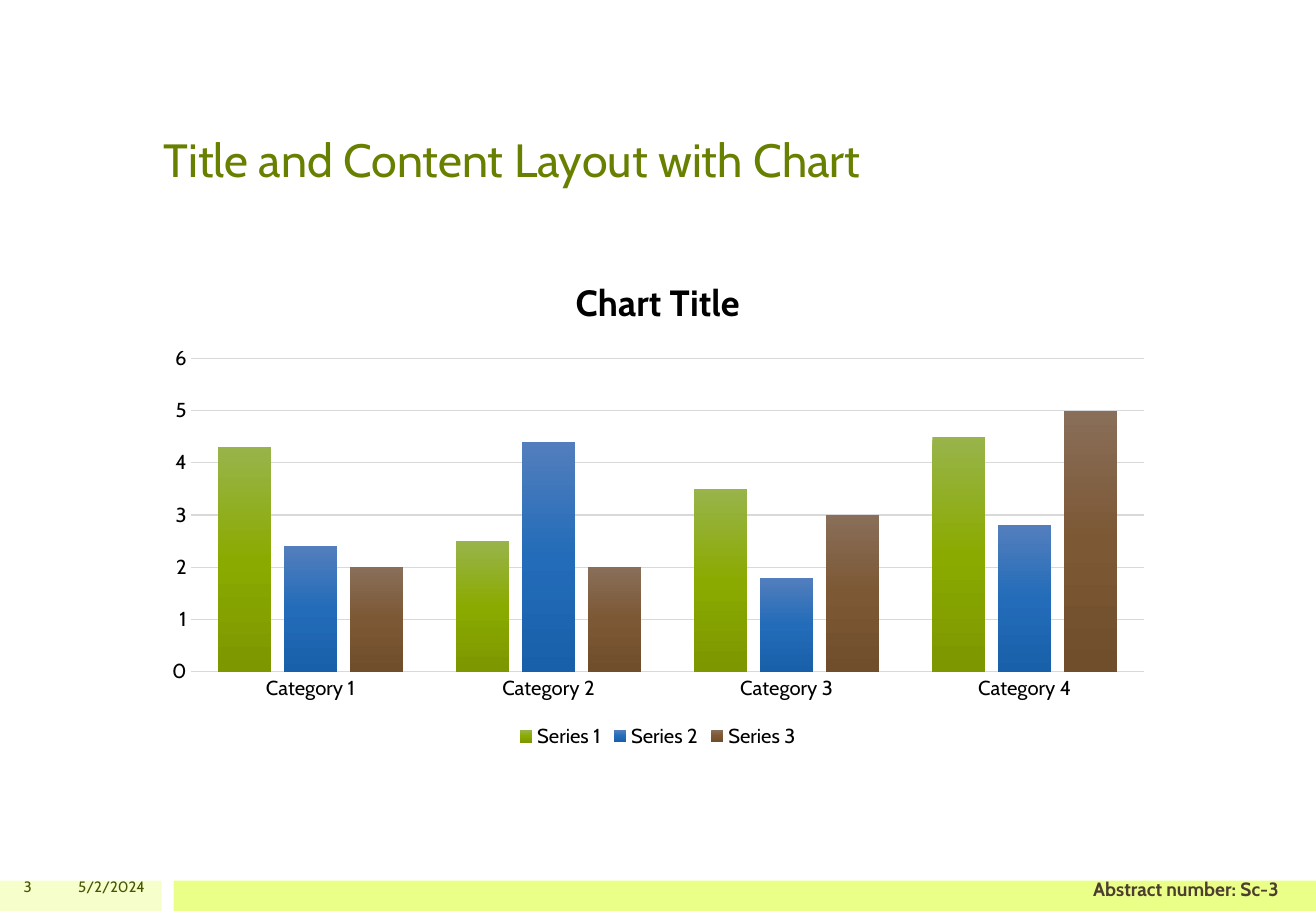
from copy import deepcopy
from dataclasses import dataclass

from pptx import Presentation
from pptx.chart.data import CategoryChartData
from pptx.dml.color import RGBColor as RGB
from pptx.enum.chart import XL_CHART_TYPE as CHART, XL_LEGEND_POSITION as LEGEND, XL_TICK_MARK as TICK
from pptx.enum.shapes import MSO_SHAPE as SHAPE
from pptx.enum.text import MSO_ANCHOR as ANCHOR, PP_ALIGN as ALIGN
from pptx.util import Inches, Pt


@dataclass(frozen=True)
class Theme:
    font: str = "Cabin"
    title: str = "688000"
    small: str = "455500"
    footer: str = "4D3E2F"
    ink: str = "000000"
    grid: str = "D9D9D9"
    pale_band: str = "F6FFCC"
    band: str = "E9FF88"
    gradients: tuple = (
        ("98B44B", "8BAA00", "7C9700"),
        ("527EBD", "236CB9", "1960AA"),
        ("896E59", "7C5834", "714E2B"),
    )
    title_size: float = 27.6
    chart_title_size: float = 21.6
    axis_size: float = 12
    footer_size: float = 11.4
    small_size: float = 8.9


def set_font(font, theme, size, color, bold=False):
    font.name = theme.font
    font.size = Pt(size)
    font.bold = bold
    font.color.rgb = RGB.from_string(color)


def write_text(tf, text, theme, size, color, bold=False, align=ALIGN.LEFT, after=0):
    p = tf.paragraphs[0]
    p.alignment = align
    p.space_after = Pt(after)
    r = p.add_run()
    r.text = text
    set_font(r.font, theme, size, color, bold)


class SlideBuilder:
    def __init__(self, slide, theme):
        self.slide = slide
        self.theme = theme

    def band(self, x, y, w, h, color):
        sp = self.slide.shapes.add_shape(SHAPE.RECTANGLE, Inches(x), Inches(y), Inches(w), Inches(h))
        sp.shadow.inherit = False
        sp.fill.solid()
        sp.fill.fore_color.rgb = RGB.from_string(color)
        sp.line.fill.background()

    def text(self, text, x, y, w, h, anchor=ANCHOR.MIDDLE, inset=(0.1, 0.05), **style):
        sp = self.slide.shapes.add_textbox(Inches(x), Inches(y), Inches(w), Inches(h))
        tf = sp.text_frame
        tf.word_wrap = True
        tf.vertical_anchor = anchor
        tf.margin_left = tf.margin_right = Inches(inset[0])
        tf.margin_top = tf.margin_bottom = Inches(inset[1])
        write_text(tf, text, self.theme, **style)

    def grid_line(self, line):
        line.color.rgb = RGB.from_string(self.theme.grid)
        line.width = Pt(0.75)

    def gradient(self, series, colors):
        fill = series.format.fill
        fill.gradient()
        fill.gradient_angle = 270
        stops = series._element.xpath(".//a:gsLst")[0]
        stops.append(deepcopy(stops[0]))
        for i, (stop, color) in enumerate(zip(fill.gradient_stops, colors)):
            stop.position = i / 2
            stop.color.rgb = RGB.from_string(color)

    def column_chart(self, title, categories, series, x, y, w, h):
        t = self.theme
        data = CategoryChartData()
        data.categories = categories
        for name, values in series.items():
            data.add_series(name, values)
        chart = self.slide.shapes.add_chart(
            CHART.COLUMN_CLUSTERED, Inches(x), Inches(y), Inches(w), Inches(h), data).chart
        set_font(chart.font, t, t.axis_size, t.ink)

        chart.has_title = True
        write_text(chart.chart_title.text_frame, title, t, t.chart_title_size, t.ink,
                   bold=True, align=ALIGN.CENTER)
        chart.chart_title.include_in_layout = False
        chart.has_legend = True
        chart.legend.position = LEGEND.BOTTOM
        chart.legend.include_in_layout = False

        for axis in (chart.category_axis, chart.value_axis):
            axis.major_tick_mark = axis.minor_tick_mark = TICK.NONE
        self.grid_line(chart.category_axis.format.line)
        self.grid_line(chart.value_axis.major_gridlines.format.line)
        chart.value_axis.format.line.fill.background()
        chart.value_axis.minimum_scale = 0
        chart.value_axis.maximum_scale = 6
        chart.value_axis.major_unit = 1

        plot = chart.plots[0]
        plot.vary_by_categories = False
        plot.gap_width = 100
        plot.overlap = -24
        for s, colors in zip(plot.series, t.gradients):
            s.invert_if_negative = False
            self.gradient(s, colors)


def main():
    prs = Presentation()
    prs.slide_width = Inches(10.83)
    prs.slide_height = Inches(7.5)
    t = Theme()
    page = SlideBuilder(prs.slides.add_slide(prs.slide_layouts[6]), t)

    page.band(0, 7.25, 1.33, 0.25, t.pale_band)
    page.band(1.43, 7.25, 9.4, 0.25, t.band)
    page.text("Title and Content Layout with Chart", 1.25, 0.3, 8.33, 1.29,
              anchor=ANCHOR.BOTTOM, size=t.title_size, color=t.title)
    page.column_chart(
        "Chart Title",
        [f"Category {i}" for i in range(1, 5)],
        {
            "Series 1": (4.3, 2.5, 3.5, 4.5),
            "Series 2": (2.4, 4.4, 1.8, 2.8),
            "Series 3": (2, 2, 3, 5),
        },
        1.25, 2.09, 8.33, 4.11)
    for text, x, w in (("3", 0, 0.36), ("5/2/2024", 0.4, 0.89)):
        page.text(text, x, 7.2, w, 0.2, size=t.small_size, color=t.small,
                  align=ALIGN.RIGHT, after=4.9)
    page.text("Abstract number: Sc-3", 8.64, 7.22, 2.24, 0.19, anchor=ANCHOR.TOP,
              inset=(0, 0), size=t.footer_size, color=t.footer, bold=True, align=ALIGN.CENTER)
    prs.save("out.pptx")


if __name__ == "__main__":
    main()
